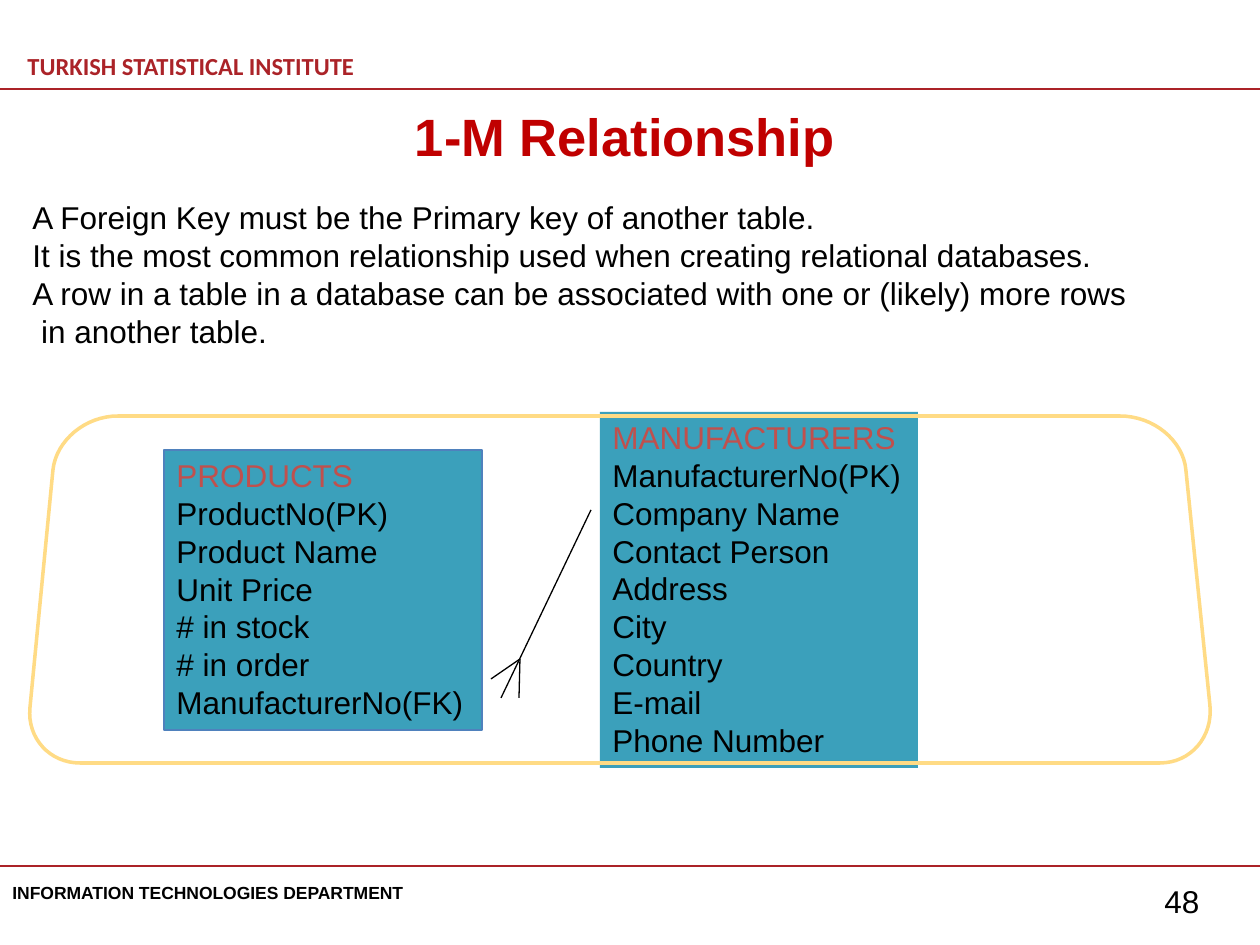
from dataclasses import dataclass

from lxml import etree
from pptx import Presentation
from pptx import util as u
from pptx.dml.color import RGBColor
from pptx.enum import shapes, text
from pptx.oxml.ns import qn

EMU_PER_PX = 914400 / 126
BLACK, RED, CRIMSON = "000000", "AB2328", "C00000"
TEAL, BLUE, HEADING, GOLD = "3BA0BB", "4F81BD", "C0504D", "FFDB85"


@dataclass
class Box:
    left: int
    top: int
    width: int
    height: int


@dataclass
class Label:
    box: Box
    lines: list[str]
    size: int = 18
    color: str = BLACK
    bold: bool = False
    font: str = "Arial"
    wrap: bool = True


@dataclass
class Entity:
    box: Box
    name: str
    fields: list[str]
    border: str | None = None


@dataclass
class Line:
    start: tuple[int, int]
    end: tuple[int, int]
    color: str = BLACK
    width: float = 0.75


@dataclass
class Corner:
    """A rounded corner: where it starts, its sharp point, where it ends."""
    start: tuple[int, int]
    point: tuple[int, int]
    end: tuple[int, int]


LABELS = [
    Label(Box(15, 45, 446, 48), ["TURKISH STATISTICAL INSTITUTE"], 14, RED, True, "Calibri"),
    Label(Box(0, 876, 423, 34), ["INFORMATION TECHNOLOGIES DEPARTMENT"], 10, bold=True, wrap=False),
    Label(Box(1152, 876, 88, 50), ["48"]),
    Label(Box(20, 192, 1182, 165), [
        "A Foreign Key must be the Primary key of another table.",
        "It is the most common relationship used when creating relational databases.",
        "A row in a table in a database can be associated with one or (likely) more rows",
        " in another table.",
    ]),
]
TITLE = Label(Box(39, 98, 1172, 77), ["1-M Relationship"], 30, CRIMSON, True)
ENTITIES = [
    Entity(Box(164, 450, 318, 280), "PRODUCTS",
           ["ProductNo(PK)", "Product Name", "Unit Price", "# in stock", "# in order",
            "ManufacturerNo(FK)"], BLUE),
    Entity(Box(600, 412, 318, 356), "MANUFACTURERS",
           ["ManufacturerNo(PK)", "Company Name", "Contact Person", "Address", "City",
            "Country", "E-mail", "Phone Number"]),
]
RULES = [
    Line((0, 89), (1260, 89), RED, 1.5),
    Line((0, 866), (1260, 866), RED, 1.5),
]
CROWS_FOOT = [
    Line((591, 510), (501, 698)),
    Line((520, 659), (491, 679)),
    Line((519, 698), (520, 659)),
]
FRAME = [
    Corner((53, 470), (59, 416), (118, 416)),
    Corner((1120, 416), (1181, 416), (1186, 470)),
    Corner((1210, 705), (1216, 763), (1160, 763)),
    Corner((80, 763), (25, 763), (30, 708)),
]


def px(value: float) -> u.Emu:
    return u.Emu(round(value * EMU_PER_PX))


def rgb(color: str) -> RGBColor:
    return RGBColor.from_string(color)


def place(box: Box) -> tuple:
    return px(box.left), px(box.top), px(box.width), px(box.height)


def apply(target, values: dict) -> None:
    for name, value in values.items():
        setattr(target, name, value)


def write(frame, label: Label, alignment=text.PP_ALIGN.LEFT,
          anchor=text.MSO_ANCHOR.TOP) -> None:
    apply(frame, {"word_wrap": label.wrap, "auto_size": text.MSO_AUTO_SIZE.NONE,
                  "vertical_anchor": anchor})
    for index, line in enumerate(label.lines):
        paragraph = frame.paragraphs[0] if index == 0 else frame.add_paragraph()
        paragraph.alignment = alignment
        run = paragraph.add_run()
        run.text = line
        apply(run.font, {"name": label.font, "size": u.Pt(label.size), "bold": label.bold})
        run.font.color.rgb = rgb(label.color)


def add_label(slide, label: Label) -> None:
    write(slide.shapes.add_textbox(*place(label.box)).text_frame, label)


def add_title(slide, label: Label) -> None:
    title = slide.shapes.title
    apply(title, dict(zip(("left", "top", "width", "height"), place(label.box))))
    write(title.text_frame, label, text.PP_ALIGN.CENTER)


def add_entity(slide, entity: Entity) -> None:
    shape = slide.shapes.add_shape(shapes.MSO_SHAPE.RECTANGLE, *place(entity.box))
    shape.shadow.inherit = False
    shape.fill.solid()
    shape.fill.fore_color.rgb = rgb(TEAL)
    if entity.border:
        shape.line.color.rgb = rgb(entity.border)
        shape.line.width = u.Pt(0.75)
    else:
        shape.line.fill.background()
    write(shape.text_frame, Label(entity.box, [entity.name, *entity.fields]))
    shape.text_frame.paragraphs[0].runs[0].font.color.rgb = rgb(HEADING)


def add_line(slide, line: Line) -> None:
    connector = slide.shapes.add_connector(
        shapes.MSO_CONNECTOR.STRAIGHT, *map(px, line.start + line.end))
    connector.line.color.rgb = rgb(line.color)
    connector.line.width = u.Pt(line.width)
    etree.SubElement(connector.element.spPr, qn("a:effectLst"))


def curve(corner: Corner, steps: int = 16) -> list[tuple[float, float]]:
    """Points on a cubic curve that is close to an elliptical arc."""
    pull = 0.55
    points = []
    for step in range(steps + 1):
        t = step / steps
        s = 1 - t
        points.append(tuple(
            s**3 * a + 3 * s * s * t * (a + pull * (c - a))
            + 3 * s * t * t * (b + pull * (c - b)) + t**3 * b
            for a, c, b in zip(corner.start, corner.point, corner.end)))
    return points


def add_frame(slide, corners: list[Corner]) -> None:
    points = [(px(x), px(y)) for corner in corners for x, y in curve(corner)]
    builder = slide.shapes.build_freeform(*points[0])
    builder.add_line_segments(points[1:], close=True)
    shape = builder.convert_to_shape()
    shape.shadow.inherit = False
    shape.fill.background()
    shape.line.color.rgb = rgb(GOLD)
    shape.line.width = u.Pt(2)


def main() -> None:
    presentation = Presentation()
    apply(presentation, {"slide_width": u.Inches(10), "slide_height": u.Inches(7.5)})
    slide = presentation.slides.add_slide(presentation.slide_layouts[5])
    add_title(slide, TITLE)
    for rule in RULES:
        add_line(slide, rule)
    for label in LABELS:
        add_label(slide, label)
    for entity in ENTITIES:
        add_entity(slide, entity)
    add_frame(slide, FRAME)
    for line in CROWS_FOOT:
        add_line(slide, line)
    presentation.save("out.pptx")


if __name__ == "__main__":
    main()
